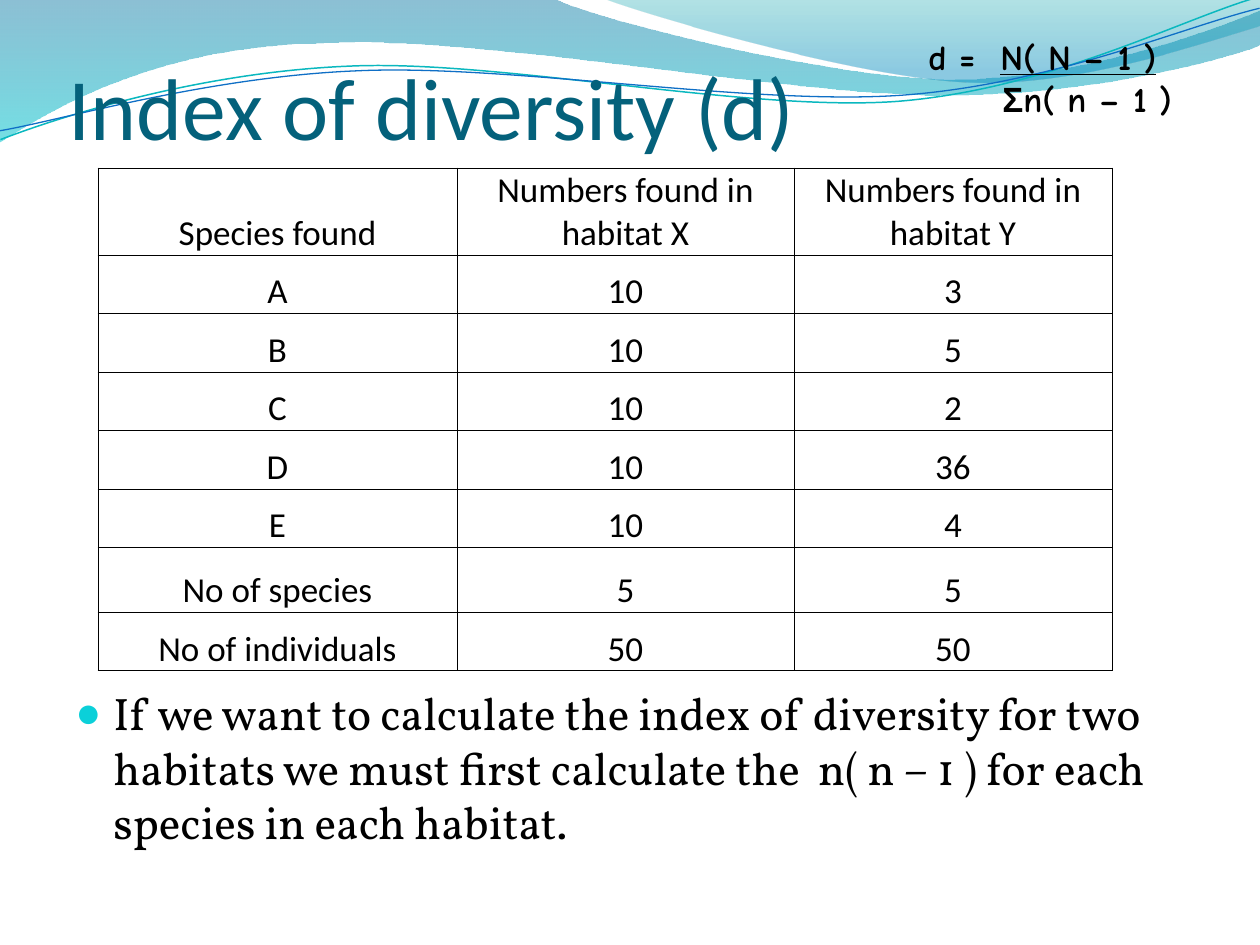
from lxml.etree import SubElement
from pptx import Presentation
from pptx.dml.color import RGBColor
from pptx.enum.text import MSO_ANCHOR as Anchor, PP_ALIGN as Align
from pptx.oxml import parse_xml
from pptx.oxml.ns import nsdecls, qn
from pptx.util import Pt

# Content
TITLE = "Index of diversity (d)"
FORMULA = [  # lines of (text, font, underlined)
    [("d =\t", "Comic Neue", False), ("N( N – 1 )", "Comic Neue", True)],
    [("Σ", "Arial", False), ("n( n – 1 )", "Comic Neue", False)],
]
TABLE = [
    ("Species found", "Numbers found in habitat X", "Numbers found in habitat Y"),
    ("A", "10", "3"),
    ("B", "10", "5"),
    ("C", "10", "2"),
    ("D", "10", "36"),
    ("E", "10", "4"),
    ("No of species", "5", "5"),
    ("No of individuals", "50", "50"),
]
COLUMN_WIDTHS = [359, 337, 318]
ROW_HEIGHTS = [87, 58, 59, 58, 59, 58, 65, 59]
BODY = ("If we want to calculate the index of diversity for two habitats we must first "
        "calculate the  n( n – 1 ) for each species in each habitat.")

# Waves: a pair is a straight step, six numbers are a Bézier curve (px)
BANDS = [  # outline, gradient stops of (position, colour, opacity %)
    ([(0, 0), (554, -1), (600, 21, 837, 79, 955, 79), (1074, 79, 1207, 33, 1260, 11),
      (1261, 45), (1239, 55, 1096, 96, 940, 95), (784, 95, 481, 35, 324, 43),
      (163, 45, 58, 105, -1, 142)],
     [(0, "0074A1", 45), (1, "00C6CF", 55)]),
    ([(604, -1), (641, 14, 859, 78, 969, 82), (1079, 87, 1211, 40, 1260, 26), (1260, 0)],
     [(0, "00A1A9", 30), (0.8, "008BBF", 45)]),
]
STRANDS = [  # outline before tilting, colour, width in points
    ([(-2, 110), (58, 90, 199, 52, 350, 53), (499, 53, 745, 118, 896, 114),
      (1049, 109, 1184, 45, 1260, 27)], "0AB8BF", 0.85),
    ([(-2, 101), (57, 94, 207, 57, 357, 58), (509, 58, 750, 112, 902, 108),
      (1052, 104, 1188, 52, 1262, 38)], "0F6FC6", 0.75),
]
STRAND_TILT = -2.7


def px(n):
    return round(n * 914400 / 126)


def colour(value):
    return RGBColor.from_string(value)


def add_wave(outline, close):
    """Draw the control points as a polygon, then join them into curves."""
    points = [(px(x), px(y)) for step in outline for x, y in zip(step[::2], step[1::2])]
    builder = slide.shapes.build_freeform(*points[0])
    builder.add_line_segments(points[1:], close=close)
    wave = builder.convert_to_shape()
    wave.shadow.inherit = False
    corners = iter(list(wave._element.iter(qn("a:lnTo"))))
    for step in outline[1:]:
        group = [next(corners) for _ in range(len(step) // 2)]
        if len(group) == 3:
            curve = parse_xml(f'<a:cubicBezTo {nsdecls("a")}/>')
            group[0].addprevious(curve)
            for corner in group:
                curve.append(corner[0])
                corner.getparent().remove(corner)
    return wave


def style(run, size, font, value="000000"):
    run.font.size, run.font.name = Pt(size), font
    run.font.color.rgb = colour(value)


def add_text_box(left, top, width, height):
    frame = slide.shapes.add_textbox(px(left), px(top), px(width), px(height)).text_frame
    frame.word_wrap = True
    return frame


def indent(paragraph, margin, first):
    properties = paragraph._p.get_or_add_pPr()
    properties.set("marL", str(px(margin)))
    properties.set("indent", str(px(first)))
    return properties


prs = Presentation()
prs.slide_width, prs.slide_height = px(1260), px(945)
slide = prs.slides.add_slide(prs.slide_layouts[6])

# Waves along the top
for outline, stops in BANDS:
    band = add_wave(outline, True)
    band.line.fill.background()
    band.fill.gradient()
    band.fill.gradient_angle = 270
    for stop, (position, value, opacity) in zip(band.fill.gradient_stops, stops):
        stop.position = position
        stop.color.rgb = colour(value)
    for rgb, (_, _, opacity) in zip(band._element.spPr.iter(qn("a:srgbClr")), stops):
        SubElement(rgb, qn("a:alpha")).set("val", str(opacity * 1000))
for outline, value, width in STRANDS:
    strand = add_wave(outline, False)
    strand.rotation = STRAND_TILT
    strand.fill.background()
    strand.line.color.rgb = colour(value)
    strand.line.width = Pt(width)

# Title
title = add_text_box(69, 0, 1134, 158)
title.vertical_anchor = Anchor.BOTTOM
title.margin_left = title.margin_right = title.margin_bottom = 0
title.text = TITLE
style(title.paragraphs[0].runs[0], 50, "Calibri", "04617B")

# Bulleted explanation
body = add_text_box(63, 679, 1134, 193)
body.text = BODY
explanation = body.paragraphs[0]
explanation.space_before = Pt(5)
style(explanation.runs[0], 26, "Vollkorn")
bullet = indent(explanation, 38, -38)
SubElement(SubElement(bullet, qn("a:buClr")), qn("a:srgbClr")).set("val", "0BD0D9")
for tag, key, value in (("a:buSzPct", "val", "95000"), ("a:buFont", "typeface", "Arial"),
                        ("a:buChar", "char", "●")):
    SubElement(bullet, qn(tag)).set(key, value)

# Species table
table = slide.shapes.add_table(len(TABLE), len(COLUMN_WIDTHS), px(98), px(168),
                               px(sum(COLUMN_WIDTHS)), px(sum(ROW_HEIGHTS))).table
table.first_row = table.horz_banding = False
for column, width in zip(table.columns, COLUMN_WIDTHS):
    column.width = px(width)
for row, height, entries in zip(table.rows, ROW_HEIGHTS, TABLE):
    row.height = px(height)
    for cell, entry in zip(row.cells, entries):
        cell.text = entry
        cell.vertical_anchor = Anchor.BOTTOM
        cell.margin_left = cell.margin_right = cell.margin_top = px(1)
        cell.margin_bottom = 0
        cell.fill.background()
        paragraph = cell.text_frame.paragraphs[0]
        paragraph.alignment = Align.CENTER
        style(paragraph.runs[0], 20, "Calibri")
        for i, side in enumerate("LRTB"):
            cell._tc.tcPr.insert(i, parse_xml(
                f'<a:ln{side} {nsdecls("a")} w="{Pt(0.5)}"><a:solidFill>'
                f'<a:srgbClr val="000000"/></a:solidFill></a:ln{side}>'))

# Formula: the fraction starts at the hanging indent
formula = add_text_box(916, 29, 315, 97)
formula.add_paragraph()
for paragraph, line, first in zip(formula.paragraphs, FORMULA, (-72, 2)):
    indent(paragraph, 72, first)
    for text, font, underlined in line:
        run = paragraph.add_run()
        run.text = text
        style(run, 20, font)
        run.font.bold, run.font.underline = True, underlined

prs.save("out.pptx")
